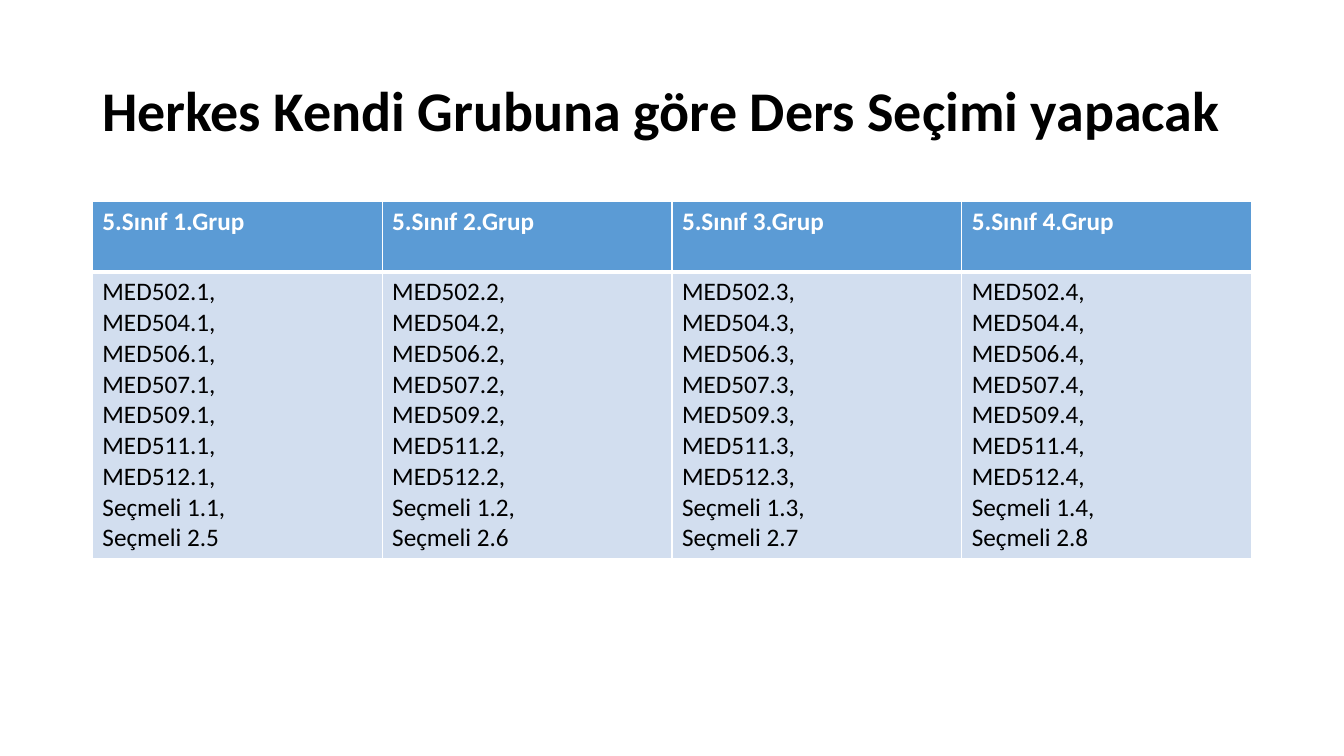
from lxml import etree
from pptx import Presentation
from pptx.dml.color import RGBColor
from pptx.enum.text import MSO_ANCHOR
from pptx.oxml.ns import qn
from pptx.util import Pt

MIDDLE = MSO_ANCHOR.MIDDLE
BLACK = RGBColor(0x00, 0x00, 0x00)
WHITE = RGBColor(0xFF, 0xFF, 0xFF)
HEADER_BLUE = RGBColor(0x5B, 0x9B, 0xD5)
BODY_BLUE = RGBColor(0xD2, 0xDE, 0xEF)

TITLE_FONT = {"name": "Calibri", "size": Pt(40), "bold": True}
HEADER_FONT = {"name": "Calibri", "size": Pt(18), "bold": True}
BODY_FONT = {"name": "Calibri", "size": Pt(18), "bold": False}
HEADER_BORDERS = {"lnL": 1, "lnR": 1, "lnT": 1, "lnB": 3}
BODY_BORDERS = {"lnL": 1, "lnR": 1, "lnB": 1}

COURSES = (502, 504, 506, 507, 509, 511, 512)
GROUP_COUNT = 4
ROW_HEIGHTS = (50.4, 204.6)


def write_lines(frame, lines, font_format, color):
    """Write each line as a paragraph of the text frame."""
    for index, line in enumerate(lines):
        para = frame.add_paragraph() if index else frame.paragraphs[0]
        span = para.add_run()
        span.text = line
        for name, value in font_format.items():
            setattr(span.font, name, value)
        span.font.color.rgb = color


def draw_borders(cell, widths):
    """Give the cell white borders of the given widths in points."""
    properties = cell._tc.get_or_add_tcPr()
    for edge, width in widths.items():
        line = etree.SubElement(properties, qn("a:" + edge), w=str(Pt(width)))
        fill = etree.SubElement(line, qn("a:solidFill"))
        etree.SubElement(fill, qn("a:srgbClr"), val=str(WHITE))


def fill_cell(cell, lines, font_format, color, background, borders):
    """Fill one table cell with text, colour and borders."""
    draw_borders(cell, borders)
    cell.fill.solid()
    cell.fill.fore_color.rgb = background
    write_lines(cell.text_frame, lines, font_format, color)


def add_title(page, left, top, width, height):
    """Place the slide title in the given box."""
    box = page.shapes.add_textbox(Pt(left), Pt(top), Pt(width), Pt(height))
    frame = box.text_frame
    frame.word_wrap = True
    frame.vertical_anchor = MIDDLE
    write_lines(frame, ["Herkes Kendi Grubuna göre Ders Seçimi yapacak"], TITLE_FONT, BLACK)
    frame.paragraphs[0].line_spacing = 0.9


def group_courses(group):
    """List the courses of one group."""
    courses = [f"MED{course}.{group}," for course in COURSES]
    return courses + [f"Seçmeli 1.{group},", f"Seçmeli 2.{group + GROUP_COUNT}"]


def add_group_table(page, left, top, width):
    """Place the table with one column for each group."""
    box = page.shapes.add_table(
        len(ROW_HEIGHTS), GROUP_COUNT, Pt(left), Pt(top), Pt(width), Pt(sum(ROW_HEIGHTS)))
    table = box.table
    for row, height in zip(table.rows, ROW_HEIGHTS):
        row.height = Pt(height)
    for index, column in enumerate(table.columns):
        group = index + 1
        column.width = Pt(width / GROUP_COUNT)
        fill_cell(table.cell(0, index), [f"5.Sınıf {group}.Grup"],
                  HEADER_FONT, WHITE, HEADER_BLUE, HEADER_BORDERS)
        fill_cell(table.cell(1, index), group_courses(group),
                  BODY_FONT, BLACK, BODY_BLUE, BODY_BORDERS)


def main():
    """Build the course selection slide and save the deck."""
    deck = Presentation()
    deck.slide_width, deck.slide_height = Pt(960), Pt(540)
    page = deck.slides.add_slide(deck.slide_layouts[6])
    add_title(page, 66, 28.75, 828, 104.4)
    add_group_table(page, 66, 143.75, 828)
    deck.save("out.pptx")


if __name__ == "__main__":
    main()
